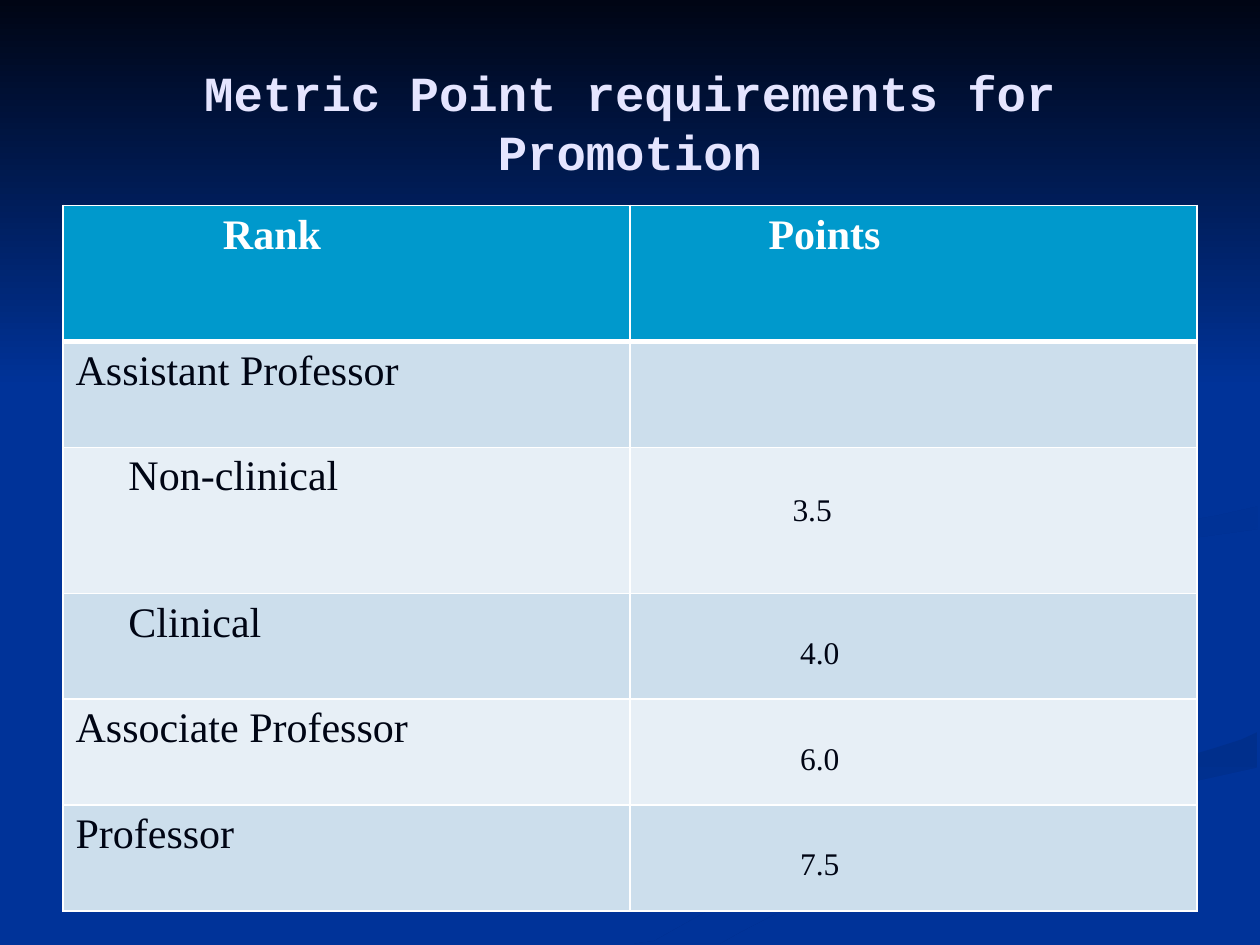
from dataclasses import dataclass

from lxml.etree import SubElement
from pptx import Presentation
from pptx.dml.color import RGBColor
from pptx.enum.shapes import MSO_SHAPE
from pptx.enum.text import MSO_ANCHOR, PP_ALIGN
from pptx.oxml.ns import qn
from pptx.util import Inches, Pt

NAVY, MIDNIGHT, WHITE = "003399", "000514", "FFFFFF"
HEADER_FILL, BANDS = "0099CC", ("CCDEEC", "E7EFF6")
SERIF = "Times New Roman"


@dataclass
class Ribbon:
    shade: str
    angle: int
    outline: list[tuple[float, float]]


@dataclass
class RankRow:
    rank: str
    points: str
    height: float = 0.84
    rank_indent: float = 0
    points_indent: float = 1.25
    points_drop: float = 0.29


RIBBONS = [
    Ribbon("002F8C", 270, [
        (5.19, 7.47), (5.03, 7.49), (5.71, 7.49), (5.87, 7.4), (6.14, 7.26),
        (6.49, 7.1), (6.95, 6.92), (7.52, 6.72), (8.21, 6.51), (9.03, 6.3),
        (9.98, 6.09), (9.98, 5.81), (9.85, 5.87), (9.63, 5.94), (9.36, 6.02),
        (9.03, 6.1), (8.31, 6.29), (7.64, 6.47), (6.96, 6.69), (6.3, 6.93),
        (5.69, 7.19)]),
    Ribbon("003091", 315, [
        (7.81, 4.6), (7.82, 4.69), (7.91, 4.78), (8.06, 4.87), (8.26, 4.96),
        (8.12, 4.87), (8.05, 4.76), (8.09, 4.66), (8.28, 4.53), (8.59, 4.43),
        (8.96, 4.35), (9.54, 4.26), (9.98, 4.2), (9.98, 4.02), (9.67, 4.09),
        (9.33, 4.15), (8.65, 4.24), (8.35, 4.3), (8.1, 4.37), (7.91, 4.47)]),
]

HEADER = RankRow("Rank", "Points", 1.08, 1.17, 1, 0)
RANKS = [
    RankRow("Assistant Professor", ""),
    RankRow("Non-clinical", "3.5", 1.16, 0.42, 1.19, 0.32),
    RankRow("Clinical", "4.0", rank_indent=0.42),
    RankRow("Associate Professor", "6.0"),
    RankRow("Professor", "7.5"),
]


def rgb(code: str) -> RGBColor:
    """Turn a hex string into a colour."""
    return RGBColor.from_string(code)


def apply(target, formats: dict) -> None:
    """Set each named attribute on the target."""
    for name, setting in formats.items():
        setattr(target, name, setting)


def style_font(font, color: str, size: float, bold: bool, name: str = SERIF) -> None:
    """Format a font."""
    apply(font, {"name": name, "size": Pt(size), "bold": bold})
    font.color.rgb = rgb(color)


def shade(shape, start: str, angle: int) -> None:
    """Fill a shape with a gradient that ends in navy."""
    shape.shadow.inherit = False
    shape.line.fill.background()
    shape.fill.gradient()
    shape.fill.gradient_angle = angle
    for stop, color in zip(shape.fill.gradient_stops, (start, NAVY)):
        stop.color.rgb = rgb(color)


def draw_ribbon(slide, ribbon: Ribbon) -> None:
    """Draw one swirl of the backdrop."""
    corners = [(Inches(x), Inches(y)) for x, y in ribbon.outline]
    builder = slide.shapes.build_freeform(*corners[0])
    builder.add_line_segments(corners[1:], close=True)
    shade(builder.convert_to_shape(), ribbon.shade, ribbon.angle)


def draw_borders(cell, top: float, bottom: float) -> None:
    """Give a cell white borders."""
    properties = cell._tc.get_or_add_tcPr()
    for side, width in {"lnL": 1, "lnR": 1, "lnT": top, "lnB": bottom}.items():
        edge = SubElement(properties, qn(f"a:{side}"), w=str(Pt(width)))
        SubElement(SubElement(edge, qn("a:solidFill")), qn("a:srgbClr"), val=WHITE)


def fill_cell(cell, words: str, fill: str, color: str, size: float, bold: bool,
              indent: float, drop: float) -> None:
    """Write and format one table cell."""
    cell.fill.solid()
    cell.fill.fore_color.rgb = rgb(fill)
    apply(cell, {"text": words, "margin_left": Inches(0.1 + indent),
                 "margin_top": Inches(0.05 + drop)})
    style_font(cell.text_frame.paragraphs[0].font, color, size, bold)


def draw_table(slide) -> None:
    """Draw the table of ranks and points."""
    rows = [HEADER, *RANKS]
    table = slide.shapes.add_table(
        len(rows), 2, Inches(0.5), Inches(1.63), Inches(9),
        Inches(sum(row.height for row in rows))).table
    for index, row in enumerate(rows):
        table.rows[index].height = Inches(row.height)
        is_header = index == 0
        fill = HEADER_FILL if is_header else BANDS[(index - 1) % 2]
        color = WHITE if is_header else MIDNIGHT
        points_size = 24 if is_header else 18
        rank_cell, points_cell = table.cell(index, 0), table.cell(index, 1)
        for cell in (rank_cell, points_cell):
            draw_borders(cell, 3 if index == 1 else 1, 3 if is_header else 1)
        fill_cell(rank_cell, row.rank, fill, color, 24, is_header, row.rank_indent, 0)
        fill_cell(points_cell, row.points, fill, color, points_size, is_header,
                  row.points_indent, row.points_drop)


def write_title(slide) -> None:
    """Place the title in front of the backdrop."""
    title = slide.shapes.title
    apply(title, {"left": Inches(0.5), "top": Inches(0.3),
                  "width": Inches(9), "height": Inches(1.25)})
    apply(title.text_frame, {
        "text": "Metric Point requirements for Promotion", "word_wrap": True,
        "vertical_anchor": MSO_ANCHOR.MIDDLE, "margin_left": Inches(0.3),
        "margin_right": Inches(0.3), "margin_top": Inches(0.13)})
    heading = title.text_frame.paragraphs[0]
    heading.alignment = PP_ALIGN.CENTER
    style_font(heading.font, "E5E5FF", 28, True, "Courier New")
    slide.shapes._spTree.append(title._element)


def main() -> None:
    """Build and save the slide."""
    deck = Presentation()
    apply(deck, {"slide_width": Inches(10), "slide_height": Inches(7.5)})
    slide = deck.slides.add_slide(deck.slide_layouts[5])
    slide.background.fill.solid()
    slide.background.fill.fore_color.rgb = rgb(NAVY)
    for ribbon in RIBBONS:
        draw_ribbon(slide, ribbon)
    sky = slide.shapes.add_shape(MSO_SHAPE.RECTANGLE, 0, 0, Inches(10), Inches(3.08))
    shade(sky, MIDNIGHT, 270)
    write_title(slide)
    draw_table(slide)
    deck.save("out.pptx")


if __name__ == "__main__":
    main()
